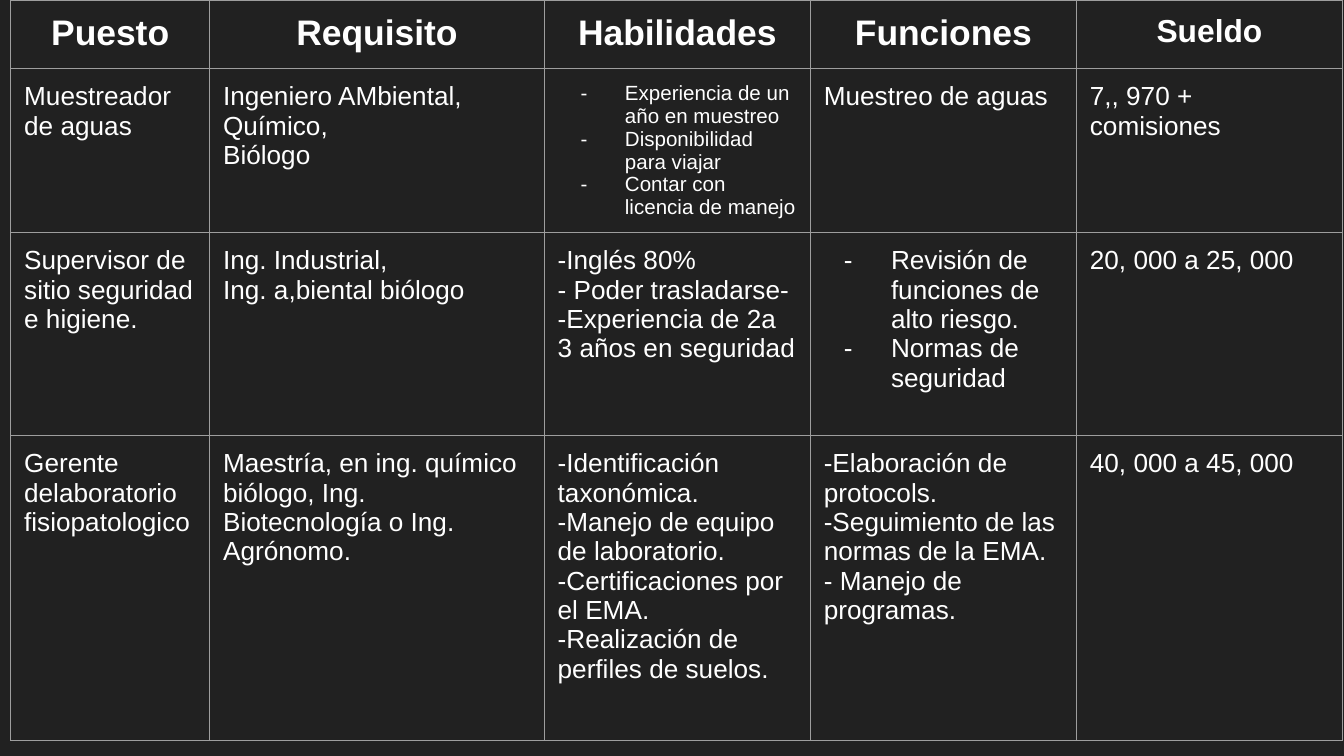
from lxml import etree
from pptx import Presentation, util as u
from pptx.dml.color import RGBColor
from pptx.enum import text
from pptx.oxml.ns import qn

WIDTH = 10
HEIGHT = WIDTH * 9 / 16
BACKGROUND, INK, RULE = "212121", "FFFFFF", "9E9E9E"
COLUMNS = [1.48, 2.49, 1.98, 1.98, 1.98]
ROWS = [0.51, 1.22, 1.51, 2.27]
HEADINGS = ["Puesto", "Requisito", "Habilidades", "Funciones", "Sueldo"]
JOBS = [
    ["Muestreador de aguas",
     "Ingeniero AMbiental,\nQuímico,\nBiólogo",
     "Experiencia de un año en muestreo\nDisponibilidad para viajar\n"
     "Contar con licencia de manejo",
     "Muestreo de aguas",
     "7,, 970 + comisiones"],
    ["Supervisor de sitio seguridad e higiene.",
     "Ing. Industrial,\nIng. a,biental biólogo",
     "-Inglés 80%\n- Poder trasladarse-\n-Experiencia de 2a 3 años en seguridad",
     "Revisión de funciones de alto riesgo.\nNormas de seguridad",
     "20, 000 a 25, 000"],
    ["Gerente delaboratorio fisiopatologico",
     "Maestría, en ing. químico biólogo, Ing. Biotecnología o Ing. Agrónomo.",
     "-Identificación taxonómica.\n-Manejo de equipo de laboratorio.\n"
     "-Certificaciones por el EMA.\n-Realización de perfiles de suelos.",
     "-Elaboración de protocols.\n-Seguimiento de las normas de la EMA.\n"
     "- Manejo de programas.",
     "40, 000 a 45, 000"],
]
SIZES = {(0, 4): 17, (1, 2): 11}
HANGING = {(1, 2): 0.33, (2, 3): 0.35}


def color(value):
    """Turn a hex string into a colour."""
    return RGBColor.from_string(value)


def add_color(parent, tag, value):
    """Append a colour wrapper element to an XML parent."""
    wrapper = etree.SubElement(parent, qn(tag))
    etree.SubElement(wrapper, qn("a:srgbClr"), val=value)


def add_dash(p, hanging):
    """Give a paragraph a dash bullet with a hanging indent."""
    props = p._p.get_or_add_pPr()
    props.set("marL", str(u.Inches(0.5)))
    props.set("indent", str(-u.Inches(hanging)))
    add_color(props, "a:buClr", INK)
    etree.SubElement(props, qn("a:buFont"), typeface="Arial")
    etree.SubElement(props, qn("a:buChar"), char="-")


def rule_cell(cell):
    """Clear the fill and draw thin rules on all four sides."""
    props = cell._tc.get_or_add_tcPr()
    for side in ("L", "R", "T", "B"):
        line = etree.SubElement(props, qn(f"a:ln{side}"), w=str(u.Pt(0.75)))
        add_color(line, "a:solidFill", RULE)
    cell.fill.background()


def fill_cell(cell, content, size, heading, hanging):
    """Write and format the paragraphs of one cell."""
    rule_cell(cell)
    cell.margin_left = cell.margin_right = u.Inches(0.1)
    cell.margin_top = cell.margin_bottom = u.Inches(0.1)
    tf = cell.text_frame
    tf.text = content
    for p in tf.paragraphs:
        p.alignment = text.PP_ALIGN.CENTER if heading else text.PP_ALIGN.LEFT
        if hanging:
            add_dash(p, hanging)
        for r in p.runs:
            r.font.name = "Arial"
            r.font.size = u.Pt(size)
            r.font.bold = heading
            r.font.color.rgb = color(INK)


def add_jobs_table(s, left, top, columns, rows):
    """Place the table of jobs on the given grid."""
    box = [u.Inches(v) for v in (left, top, sum(columns), sum(rows))]
    table = s.shapes.add_table(len(rows), len(columns), *box).table
    table.first_row = table.horz_banding = False
    for column, width in zip(table.columns, columns):
        column.width = u.Inches(width)
    for row, height in zip(table.rows, rows):
        row.height = u.Inches(height)
    for i, contents in enumerate([HEADINGS] + JOBS):
        for j, content in enumerate(contents):
            size = SIZES.get((i, j), 14 if i else 19)
            fill_cell(table.cell(i, j), content, size, i == 0, HANGING.get((i, j)))


def main():
    """Build and save the slide."""
    prs = Presentation()
    prs.slide_width, prs.slide_height = u.Inches(WIDTH), u.Inches(HEIGHT)
    s = prs.slides.add_slide(prs.slide_layouts[6])
    s.background.fill.solid()
    s.background.fill.fore_color.rgb = color(BACKGROUND)
    add_jobs_table(s, 0.08, 0, COLUMNS, ROWS)
    prs.save("out.pptx")


if __name__ == "__main__":
    main()
